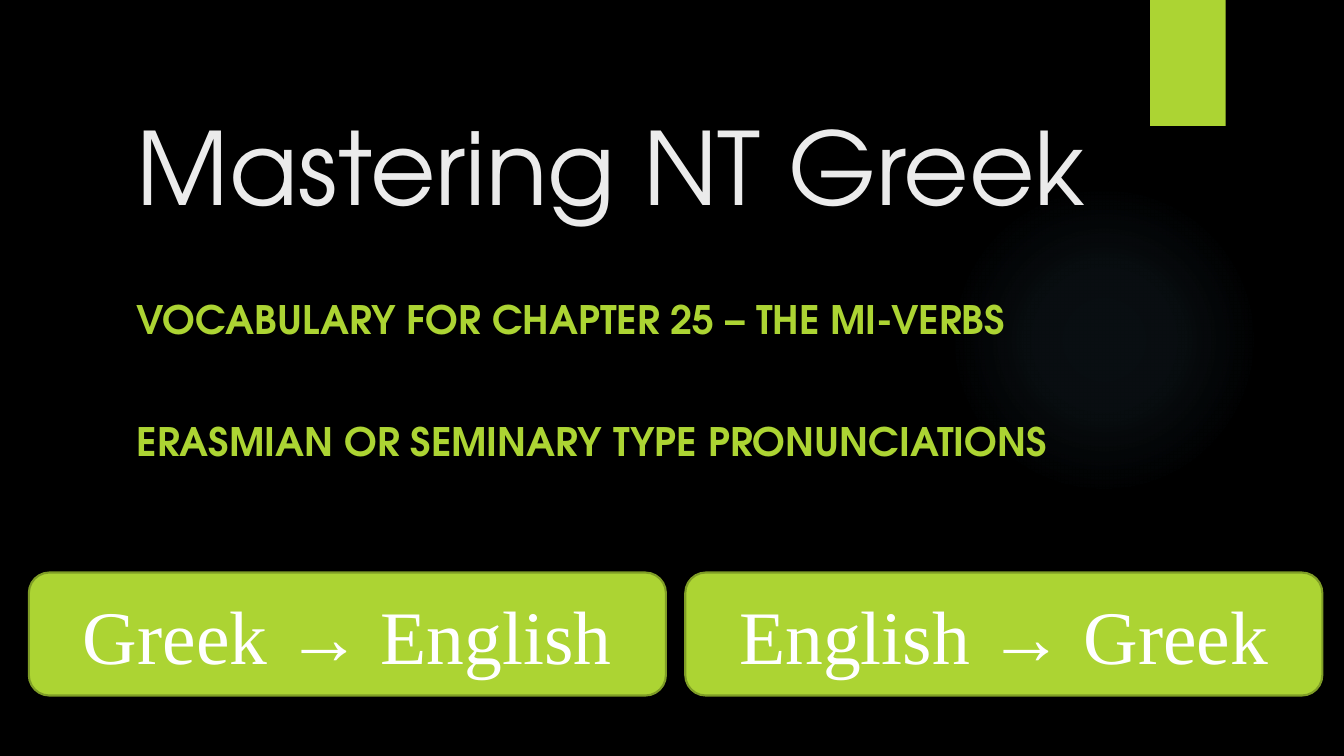
from dataclasses import dataclass

from lxml import etree
from pptx import Presentation
from pptx.dml.color import RGBColor
from pptx.enum.shapes import MSO_SHAPE
from pptx.enum.text import MSO_ANCHOR, PP_ALIGN
from pptx.oxml import parse_xml
from pptx.oxml.ns import nsdecls
from pptx.shapes.autoshape import Shape
from pptx.slide import Slide
from pptx.text.text import _Paragraph as Paragraph
from pptx.util import Pt

ELLIPSE, RECTANGLE = MSO_SHAPE.OVAL, MSO_SHAPE.RECTANGLE
ROUNDED_RECTANGLE = MSO_SHAPE.ROUNDED_RECTANGLE
TOP, MIDDLE, BOTTOM = MSO_ANCHOR.TOP, MSO_ANCHOR.MIDDLE, MSO_ANCHOR.BOTTOM
CENTER = PP_ALIGN.CENTER

BLACK = RGBColor(0x00, 0x00, 0x00)
WHITE = RGBColor(0xFF, 0xFF, 0xFF)
OFF_WHITE = RGBColor(0xEB, 0xEB, 0xEB)
LIME = RGBColor(0xAC, 0xD4, 0x33)
DARK_LIME = RGBColor(0x7F, 0x9D, 0x26)
GLOW_BLUE = RGBColor(0x7A, 0xC4, 0xF0)

HEADING_FONT = "TeX Gyre Adventor"
TITLE_FORMAT = {"name": HEADING_FONT, "size": Pt(72)}
SUBTITLE_FORMAT = {"name": HEADING_FONT, "size": Pt(28), "bold": True}
BUTTON_FORMAT = {"name": "Times New Roman", "size": Pt(54)}

GLOW_STOPS = ((0, 7), (36, 6), (69, 0))  # position and opacity in percent


@dataclass(frozen=True)
class Box:
    left: float
    top: float
    width: float
    height: float

    def lengths(self) -> tuple[Pt, Pt, Pt, Pt]:
        return Pt(self.left), Pt(self.top), Pt(self.width), Pt(self.height)


@dataclass(frozen=True)
class TextBlock:
    box: Box
    lines: tuple[str, ...]
    font_format: dict
    color: RGBColor
    anchor: MSO_ANCHOR
    gap: float = 0


TEXT_BLOCKS = (
    TextBlock(Box(90.72, 50.4, 722.88, 114.48), ("Mastering NT Greek",),
              TITLE_FORMAT, OFF_WHITE, BOTTOM),
    TextBlock(Box(90.72, 207.36, 750.96, 193.68),
              ("VOCABULARY FOR CHAPTER 25 – THE MI-VERBS",
               "ERASMIAN OR SEMINARY TYPE PRONUNCIATIONS"),
              SUBTITLE_FORMAT, LIME, TOP, gap=53.6),
)

BUTTON_LABELS = ("Greek → English", "English → Greek")
FIRST_BUTTON = Box(20.6, 408.96, 455.04, 87.84)
BUTTON_PITCH = 468.9


def add_filled_shape(slide: Slide, kind: MSO_SHAPE, box: Box, color: RGBColor) -> Shape:
    shape = slide.shapes.add_shape(kind, *box.lengths())
    shape.shadow.inherit = False
    shape.fill.solid()
    shape.fill.fore_color.rgb = color
    shape.line.fill.background()
    return shape


def write(paragraph: Paragraph, text: str, font_format: dict, color: RGBColor) -> None:
    run = paragraph.add_run()
    run.text = text
    for name, value in font_format.items():
        setattr(run.font, name, value)
    run.font.color.rgb = color


def add_glow(slide: Slide) -> None:
    """Draw a faint circle that fades out from its centre."""
    shape = add_filled_shape(slide, ELLIPSE, Box(677.52, 131.76, 221.76, 221.76), GLOW_BLUE)
    stops = "".join(
        f'<a:gs pos="{position * 1000}"><a:srgbClr val="{GLOW_BLUE}">'
        f'<a:alpha val="{opacity * 1000}"/></a:srgbClr></a:gs>'
        for position, opacity in GLOW_STOPS)
    gradient = parse_xml(
        f'<a:gradFill {nsdecls("a")} rotWithShape="1"><a:gsLst>{stops}</a:gsLst>'
        '<a:path path="circle"><a:fillToRect l="50000" t="50000" r="50000" b="50000"/>'
        '</a:path></a:gradFill>')
    properties = shape.element.spPr
    properties.replace(properties.find("{*}solidFill"), gradient)


def add_bookmark(slide: Slide) -> None:
    """Draw the tab at the top edge with its soft shadow."""
    shape = add_filled_shape(slide, RECTANGLE, Box(821.52, 0, 54, 90), LIME)
    effects = shape.element.spPr.find("{*}effectLst")
    effects.append(etree.fromstring(
        f'<a:outerShdw {nsdecls("a")} blurRad="{Pt(3)}" dist="{Pt(2)}" dir="5400000">'
        f'<a:srgbClr val="{BLACK}"><a:alpha val="45000"/></a:srgbClr></a:outerShdw>'))


def add_text_block(slide: Slide, block: TextBlock) -> None:
    frame = slide.shapes.add_textbox(*block.box.lengths()).text_frame
    frame.word_wrap = True
    frame.vertical_anchor = block.anchor
    for index, line in enumerate(block.lines):
        paragraph = frame.add_paragraph() if index else frame.paragraphs[0]
        if index:
            paragraph.space_before = Pt(block.gap)
        write(paragraph, line, block.font_format, block.color)


def add_button(slide: Slide, box: Box, label: str) -> None:
    shape = add_filled_shape(slide, ROUNDED_RECTANGLE, box, LIME)
    shape.line.color.rgb = DARK_LIME
    shape.line.width = Pt(1.5)
    shape.text_frame.word_wrap = True
    shape.text_frame.vertical_anchor = MIDDLE
    paragraph = shape.text_frame.paragraphs[0]
    paragraph.alignment = CENTER
    write(paragraph, label, BUTTON_FORMAT, WHITE)


def main() -> None:
    presentation = Presentation()
    presentation.slide_width, presentation.slide_height = Pt(960), Pt(540)
    slide = presentation.slides.add_slide(presentation.slide_layouts[6])
    slide.background.fill.solid()
    slide.background.fill.fore_color.rgb = BLACK

    add_glow(slide)
    add_bookmark(slide)
    for block in TEXT_BLOCKS:
        add_text_block(slide, block)
    for index, label in enumerate(BUTTON_LABELS):
        left = FIRST_BUTTON.left + index * BUTTON_PITCH
        box = Box(left, FIRST_BUTTON.top, FIRST_BUTTON.width, FIRST_BUTTON.height)
        add_button(slide, box, label)
    presentation.save("out.pptx")


if __name__ == "__main__":
    main()
